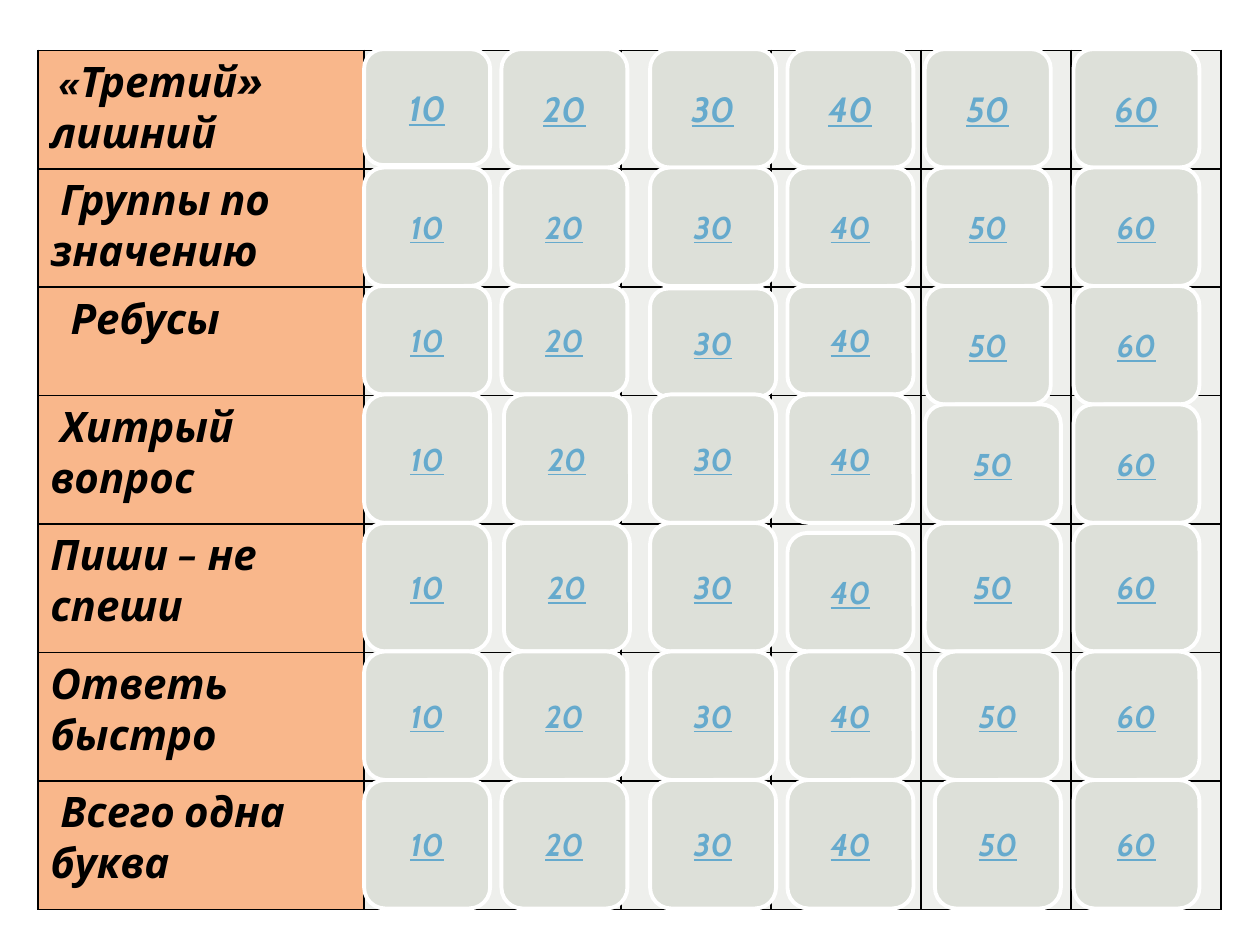
from itertools import accumulate

from lxml.etree import SubElement
from pptx import Presentation
from pptx.dml.color import RGBColor
from pptx.enum.shapes import MSO_SHAPE
from pptx.enum.text import MSO_ANCHOR, PP_ALIGN
from pptx.oxml import parse_xml
from pptx.oxml.ns import nsdecls, qn
from pptx.util import Inches, Pt

BLACK = RGBColor(0x00, 0x00, 0x00)
WHITE = RGBColor(0xFF, 0xFF, 0xFF)
ORANGE = RGBColor(0xF8, 0xA4, 0x6D)
PALE = RGBColor(0xEE, 0xEF, 0xEC)
GREY = RGBColor(0xDD, 0xE0, 0xD9)
BLUE = RGBColor(0x66, 0xAA, 0xCD)
FONT = "Cabin"

COL_WIDTHS = [2.59, 0.85] + [1.19] * 5
ROW_HEIGHTS = [0.94, 0.94, 0.86] + [1.02] * 4

# Each topic: first-line indent in inches, then (text, size) runs
TOPICS = [
    (0.07, [("«", 20), ("Третий» лишний", 24)]),
    (0.08, [("Группы по значению", 24)]),
    (0.16, [("Ребусы", 24)]),
    (0.08, [("Хитрый вопрос", 24)]),
    (0, [("Пиши – не спеши", 24)]),
    (0, [("Ответь быстро", 24)]),
    (0.08, [("Всего одна буква", 24)]),
]

BUTTON_LEFTS = [2.59, 3.68, 4.86, 5.95, 7.04, 8.22]  # from the board's left edge
# (row, column): what differs from the regular button grid
BUTTON_CHANGES = {
    (0, 0): {"height": 0.92},
    (2, 2): {"dy": 0.02},
    (2, 4): {"height": 0.94},
    (2, 5): {"height": 0.94},
    (3, 1): {"dx": 0.02},
    (3, 4): {"dy": 0.08, "width": 1.08, "height": 0.94},
    (3, 5): {"dy": 0.08, "height": 0.94},
    (4, 1): {"dx": 0.02},
    (4, 3): {"dy": 0.08, "height": 0.94},
    (4, 4): {"width": 1.08},
    (5, 4): {"dx": 0.08},
    (6, 4): {"dx": 0.08},
}


def add_text(p, text, size, color, underline=False):
    r = p.add_run()
    r.text = text
    font = r.font
    font.name, font.size = FONT, Pt(size)
    font.bold = font.italic = True
    font.underline = underline
    font.color.rgb = color


def format_cell(cell, color, alpha=None):
    """Fill a cell and draw its four black borders."""
    cell.fill.solid()
    cell.fill.fore_color.rgb = color
    tcPr = cell._tc.get_or_add_tcPr()
    if alpha is not None:
        clr = tcPr.find(qn("a:solidFill")).find(qn("a:srgbClr"))
        SubElement(clr, qn("a:alpha")).set("val", str(alpha * 1000))
    for i, side in enumerate(("lnL", "lnR", "lnT", "lnB")):
        tcPr.insert(i, parse_xml(
            f'<a:{side} {nsdecls("a")} w="{Pt(1)}"><a:solidFill>'
            f'<a:srgbClr val="{BLACK}"/></a:solidFill></a:{side}>'))


def add_board(s, left, top, width, height):
    table = s.shapes.add_table(
        len(TOPICS), len(COL_WIDTHS), Inches(left), Inches(top),
        Inches(width), Inches(height)).table
    table.first_row = table.horz_banding = False
    for col, w in zip(table.columns, COL_WIDTHS):
        col.width = Inches(w)
    for row, h, (indent, runs) in zip(table.rows, ROW_HEIGHTS, TOPICS):
        row.height = Inches(h)
        topic, *others = row.cells
        format_cell(topic, ORANGE, alpha=79)
        p = topic.text_frame.paragraphs[0]
        pPr = p._p.get_or_add_pPr()
        pPr.set("marL", "0")
        pPr.set("indent", str(Inches(indent)))
        for text, size in runs:
            add_text(p, text, size, BLACK)
        for cell in others:
            format_cell(cell, PALE)


def add_button(s, left, top, width, height, text, size):
    sp = s.shapes.add_shape(MSO_SHAPE.ROUNDED_RECTANGLE, Inches(left),
                            Inches(top), Inches(width), Inches(height))
    sp.shadow.inherit = False
    sp.fill.solid()
    sp.fill.fore_color.rgb = GREY
    sp.line.color.rgb = WHITE
    sp.line.width = Pt(2.22)
    tf = sp.text_frame
    tf.word_wrap = True
    tf.vertical_anchor = MSO_ANCHOR.MIDDLE
    p = tf.paragraphs[0]
    p.alignment = PP_ALIGN.CENTER
    add_text(p, text, size, BLUE, underline=True)


def add_buttons(s, left, top):
    row_tops = accumulate(ROW_HEIGHTS[:-1], initial=top)
    for row, (y, h) in enumerate(zip(row_tops, ROW_HEIGHTS)):
        for col, x in enumerate(BUTTON_LEFTS):
            change = BUTTON_CHANGES.get((row, col), {})
            add_button(s, left + x + change.get("dx", 0),
                       y + change.get("dy", 0),
                       change.get("width", 1), change.get("height", h),
                       str(10 * (col + 1)), 20 if row == 0 else 18)


def main():
    prs = Presentation()
    prs.slide_width, prs.slide_height = Inches(10), Inches(7.5)
    s = prs.slides.add_slide(prs.slide_layouts[6])
    add_board(s, 0.3, 0.4, sum(COL_WIDTHS), sum(ROW_HEIGHTS))
    add_buttons(s, 0.3, 0.39)
    prs.save("out.pptx")


if __name__ == "__main__":
    main()
